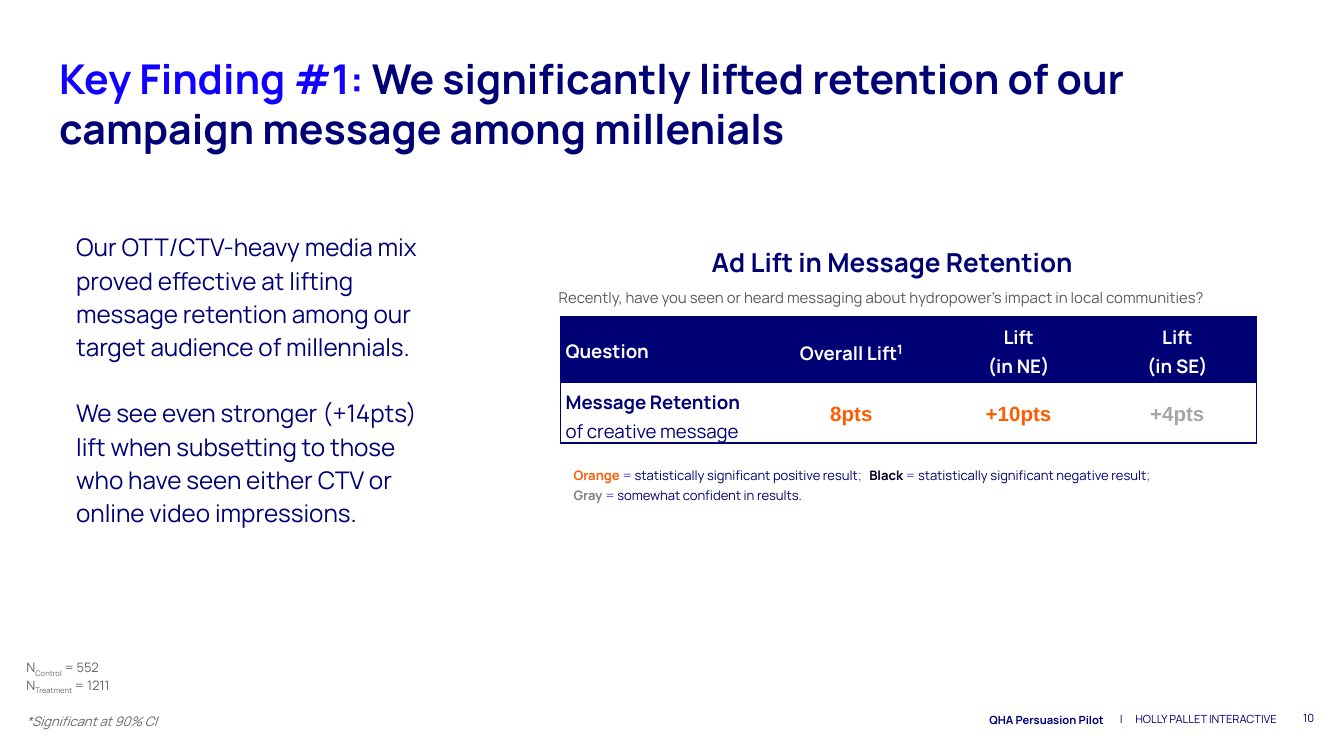
from dataclasses import dataclass

from lxml import etree
from pptx import Presentation
from pptx.dml.color import RGBColor
from pptx.enum.text import MSO_ANCHOR, PP_ALIGN
from pptx.oxml.ns import qn
from pptx.util import Cm, Pt

LEFT, CENTER, RIGHT = PP_ALIGN.LEFT, PP_ALIGN.CENTER, PP_ALIGN.RIGHT
TOP, MIDDLE = MSO_ANCHOR.TOP, MSO_ANCHOR.MIDDLE

NAVY = "000075"
BLUE = "1100FF"
VIOLET = "3A3AFE"
ORANGE = "FF5B00"
BLACK = "000028"
GRAY = "7F7F7F"
PALE = "A6A6A6"
WHITE = "FFFFFF"


@dataclass
class Piece:
    text: str
    size: float
    color: str = NAVY
    bold: bool = False
    italic: bool = False
    baseline: int = 0
    font: str = "Manrope"


def rgb(color):
    return RGBColor.from_string(color)


def write(frame, paragraphs, align=LEFT, spacing=1.0):
    for index, pieces in enumerate(paragraphs):
        paragraph = frame.paragraphs[0] if index == 0 else frame.add_paragraph()
        paragraph.alignment = align
        paragraph.line_spacing = spacing
        for piece in pieces:
            run = paragraph.add_run()
            run.text = piece.text
            run.font.name = piece.font
            run.font.size = Pt(piece.size)
            run.font.bold = piece.bold
            run.font.italic = piece.italic
            run.font.color.rgb = rgb(piece.color)
            if piece.baseline:
                run._r.get_or_add_rPr().set("baseline", str(piece.baseline * 1000))


def add_text(slide, box, paragraphs, inset=(0.25, 0.13), anchor=TOP, **layout):
    frame = slide.shapes.add_textbox(*(Cm(length) for length in box)).text_frame
    frame.word_wrap = True
    frame.vertical_anchor = anchor
    frame.margin_left = frame.margin_right = Cm(inset[0])
    frame.margin_top = frame.margin_bottom = Cm(inset[1])
    write(frame, paragraphs, **layout)
    return frame


def add_tab(paragraph, position):
    tabs = etree.SubElement(paragraph._p.get_or_add_pPr(), qn("a:tabLst"))
    etree.SubElement(tabs, qn("a:tab"), pos=str(Cm(position)), algn="l")


def set_borders(cell, visible):
    properties = cell._tc.get_or_add_tcPr()
    for side in "LRTB":
        line = etree.SubElement(properties, qn(f"a:ln{side}"), w=str(Pt(1)))
        if side in visible:
            fill = etree.SubElement(line, qn("a:solidFill"))
            etree.SubElement(fill, qn("a:srgbClr"), val=NAVY)
        else:
            etree.SubElement(line, qn("a:noFill"))


def add_title(slide, box):
    add_text(slide, box, [[
        Piece("Key Finding #1: ", 22, BLUE, True),
        Piece("We significantly lifted retention of our campaign message among millenials", 22, bold=True),
    ]], inset=(0.1, 0.05))


def add_commentary(slide, box):
    frame = add_text(slide, box, [
        [Piece("Our OTT/CTV-heavy media mix proved effective at lifting message retention "
               "among our target audience of millennials.", 13)],
        [Piece("We see even stronger (+14pts) lift when subsetting to those who have seen "
               "either CTV or online video impressions.", 13)],
    ], spacing=1.14)
    frame.paragraphs[1].space_before = Pt(17.8)


def add_lift_table(slide, box):
    def heading(text):
        return [Piece(text, 10, WHITE, True)]

    def lift(text, color):
        return [[Piece(text, 11, color, True, font="Arial")]]

    rows = [
        [[heading("Question")],
         [heading("Overall Lift") + [Piece("1", 12, WHITE, True, baseline=30)]],
         [heading("Lift"), heading("(in NE)")],
         [heading("Lift"), heading("(in SE)")]],
        [[[Piece("Message Retention ", 10, bold=True), Piece("of creative message", 10)]],
         lift("8pts", ORANGE), lift("+10pts", ORANGE), lift("+4pts", PALE)],
    ]
    widths = [3.84, 3.32, 3, 3]
    heights = [1.25, 1.13]
    table = slide.shapes.add_table(len(rows), len(widths), *(Cm(length) for length in box)).table
    table.first_row = table.horz_banding = False
    for column, width in zip(table.columns, widths):
        column.width = Cm(width)
    for row, height in zip(table.rows, heights):
        row.height = Cm(height)
    for r, row in enumerate(rows):
        for c, paragraphs in enumerate(row):
            cell = table.cell(r, c)
            cell.margin_left = cell.margin_right = Cm(0.1)
            cell.margin_top = cell.margin_bottom = Cm(0.05)
            cell.vertical_anchor = MIDDLE
            set_borders(cell, "TB"[r] + {0: "L", len(widths) - 1: "R"}.get(c, ""))
            if r == 0:
                cell.fill.solid()
                cell.fill.fore_color.rgb = rgb(NAVY)
            else:
                cell.fill.background()
            write(cell.text_frame, paragraphs, align=CENTER if c else LEFT, spacing=1.15)


def add_results(slide, box):
    left, top, width, height = box
    add_text(slide, (left - 0.51, top, width + 0.51, 0.86),
             [[Piece("Ad Lift in Message Retention ", 14, bold=True)]], align=CENTER)
    question = add_text(slide, (left - 0.28, top + 0.69, width + 1.52, 0.86), [[
        Piece("Recently, have you seen or heard messaging about hydropower’s impact in local communities?",
              8, "595959")]], inset=(0.25, 0.25), spacing=1.14)
    question.word_wrap = True
    add_lift_table(slide, (left, top + 1.47, width, 2.38))
    equals = Piece(" = ", 7, VIOLET)
    legend = add_text(slide, (left, top + height - 0.94, width, 0.94), [
        [Piece("Orange", 7, ORANGE, True), equals,
         Piece("statistically significant positive result", 7), Piece(";\t", 7, VIOLET),
         Piece("Black", 7, BLACK, True), equals,
         Piece("statistically significant negative result", 7), Piece(";", 7, VIOLET)],
        [Piece("Gray", 7, GRAY, True), equals, Piece("somewhat confident in results.", 7)],
    ], spacing=1.25)
    add_tab(legend.paragraphs[0], 5.59)


def add_sample_notes(slide, box):
    def note(text, **style):
        return Piece(text, 7, "666666", **style)

    samples = [[note("N"), note(group, baseline=-25), note(f" = {count}")]
               for group, count in [("Control", 552), ("Treatment", 1211)]]
    frame = add_text(slide, box, samples + [[note("*Significant at 90% CI", italic=True)]],
                     inset=(0.25, 0.25))
    frame.paragraphs[2].space_before = Pt(10)


def add_footer(slide, box):
    left, top, width, height = box
    add_text(slide, (left, top + 0.25, 6.86, 0.61),
             [[Piece("QHA Persuasion Pilot", 6, bold=True)]],
             inset=(0.25, 0.25), anchor=MIDDLE, align=RIGHT, spacing=1.15)
    add_text(slide, (left + 6.54, top + 0.33, 0.8, 0.46), [[Piece("|", 6)]],
             inset=(0.1, 0.1), align=CENTER)
    add_text(slide, (left + 6.9, top + 0.33, 3.16, 0.46), [[Piece("HOLLY PALLET INTERACTIVE", 6)]],
             inset=(0.18, 0.1), align=RIGHT)
    add_text(slide, (left + width - 1.52, top, 1.52, height), [[Piece("10", 6)]],
             inset=(0.25, 0.25), anchor=MIDDLE, align=RIGHT)


def main():
    deck = Presentation()
    deck.slide_width, deck.slide_height = Cm(25.4), Cm(14.29)
    slide = deck.slides.add_slide(deck.slide_layouts[6])
    add_footer(slide, (14.25, 13.03, 10.84, 1.09))
    add_title(slide, (1.02, 0.97, 23.22, 1.52))
    add_commentary(slide, (1.19, 4.19, 6.96, 7.14))
    add_results(slide, (10.59, 4.52, 13.16, 5.06))
    add_sample_notes(slide, (0.25, 12.22, 3.84, 1.78))
    deck.save("out.pptx")


if __name__ == "__main__":
    main()
